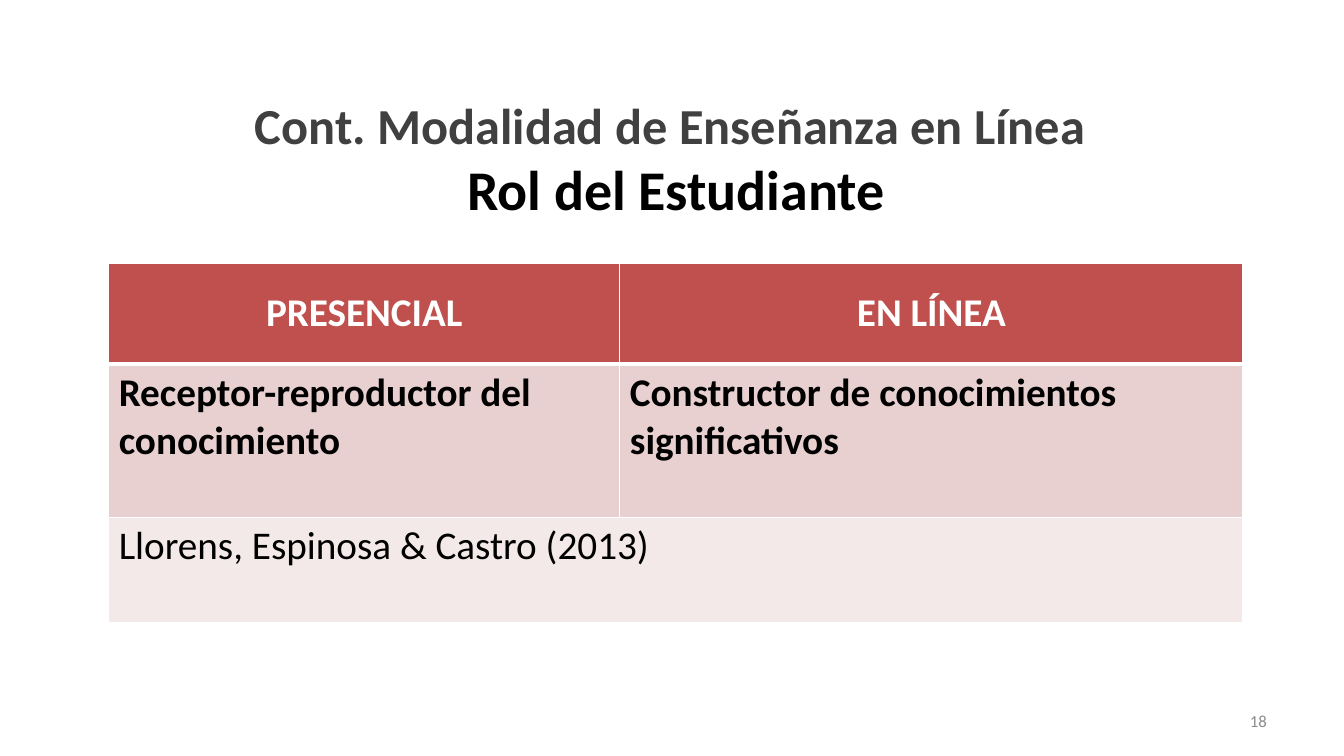
import pptx
import pptx.util
import pptx.dml.color
import pptx.enum.text
import pptx.oxml
import pptx.oxml.ns
from pptx.util import Cm

COLORS = {
    "white": "FFFFFF",
    "black": "000000",
    "title": "404040",
    "number": "8C8C8C",
    "header": "C0504D",
    "body": "E8D0D0",
    "source": "F4E9E9",
}
FONT = "Calibri"
ALIGN = pptx.enum.text.PP_ALIGN
ANCHOR = pptx.enum.text.MSO_ANCHOR


def add_span(para, text, size, color, bold=False):
    """Add one formatted run to a paragraph."""
    span = para.add_run()
    span.text = text
    span.font.name = FONT
    span.font.size = pptx.util.Pt(size)
    span.font.bold = bold
    span.font.color.rgb = pptx.dml.color.RGBColor.from_string(COLORS[color])


def add_text_box(page, box, anchor, align):
    """Add a wrapping text box and return its first paragraph."""
    frame = page.shapes.add_textbox(*box).text_frame
    frame.word_wrap = True
    frame.vertical_anchor = anchor
    para = frame.paragraphs[0]
    para.alignment = align
    return para


def add_title(page, box):
    """Place the two-line title in its box."""
    para = add_text_box(page, box, ANCHOR.BOTTOM, ALIGN.CENTER)
    add_span(para, "Cont. Modalidad de Enseñanza en Línea ", 36, "title", True)
    para.add_line_break()
    add_span(para, "Rol del Estudiante", 40, "black", True)


def add_page_number(page, box):
    """Place the page number at the right of its box."""
    para = add_text_box(page, box, ANCHOR.MIDDLE, ALIGN.RIGHT)
    add_span(para, "18", 12, "number")


def set_borders(cell, bottom):
    """Draw white borders round a cell, with the given bottom width."""
    properties = cell._tc.get_or_add_tcPr()
    widths = {"lnL": 1, "lnR": 1, "lnT": 1, "lnB": bottom}
    for position, (side, width) in enumerate(widths.items()):
        properties.insert(position, pptx.oxml.parse_xml(
            f'<a:{side} {pptx.oxml.ns.nsdecls("a")} w="{pptx.util.Pt(width)}">'
            f'<a:solidFill><a:srgbClr val="{COLORS["white"]}"/></a:solidFill></a:{side}>'
        ))


def fill_cell(cell, text, fill, color, bold, header):
    """Fill a table cell and write its text."""
    cell.fill.solid()
    cell.fill.fore_color.rgb = pptx.dml.color.RGBColor.from_string(COLORS[fill])
    set_borders(cell, 3 if header else 1)
    cell.vertical_anchor = ANCHOR.MIDDLE if header else ANCHOR.TOP
    para = cell.text_frame.paragraphs[0]
    para.alignment = ALIGN.CENTER if header else ALIGN.LEFT
    add_span(para, text, 28, color, bold)


def add_role_table(page, box):
    """Place the table comparing the student's roles in its box."""
    rows = [
        (Cm(2.54), "header", "white", True, ["PRESENCIAL", "EN LÍNEA"]),
        (Cm(3.86), "body", "black", True,
         ["Receptor-reproductor del conocimiento",
          "Constructor de conocimientos significativos"]),
        (Cm(2.67), "source", "black", False, ["Llorens, Espinosa & Castro (2013)", ""]),
    ]
    table = page.shapes.add_table(len(rows), 2, *box).table
    table.columns[0].width = Cm(12.88)
    table.columns[1].width = box[2] - Cm(12.88)
    table.cell(2, 0).merge(table.cell(2, 1))
    for row, (height, fill, color, bold, texts) in enumerate(rows):
        table.rows[row].height = height
        for column, text in enumerate(texts):
            cell = table.cell(row, column)
            if not cell.is_spanned:
                fill_cell(cell, text, fill, color, bold, row == 0)


def main():
    """Build the slide and save the deck."""
    deck = pptx.Presentation()
    deck.slide_width, deck.slide_height = Cm(33.87), Cm(19.05)
    page = deck.slides.add_slide(deck.slide_layouts[6])
    add_page_number(page, (Cm(24.28), Cm(17.65), Cm(7.9), Cm(1.02)))
    add_role_table(page, (Cm(2.74), Cm(6.63), Cm(28.58), Cm(9.07)))
    add_title(page, (Cm(1.8), Cm(2.54), Cm(30.48), Cm(3.18)))
    deck.save("out.pptx")


if __name__ == "__main__":
    main()
